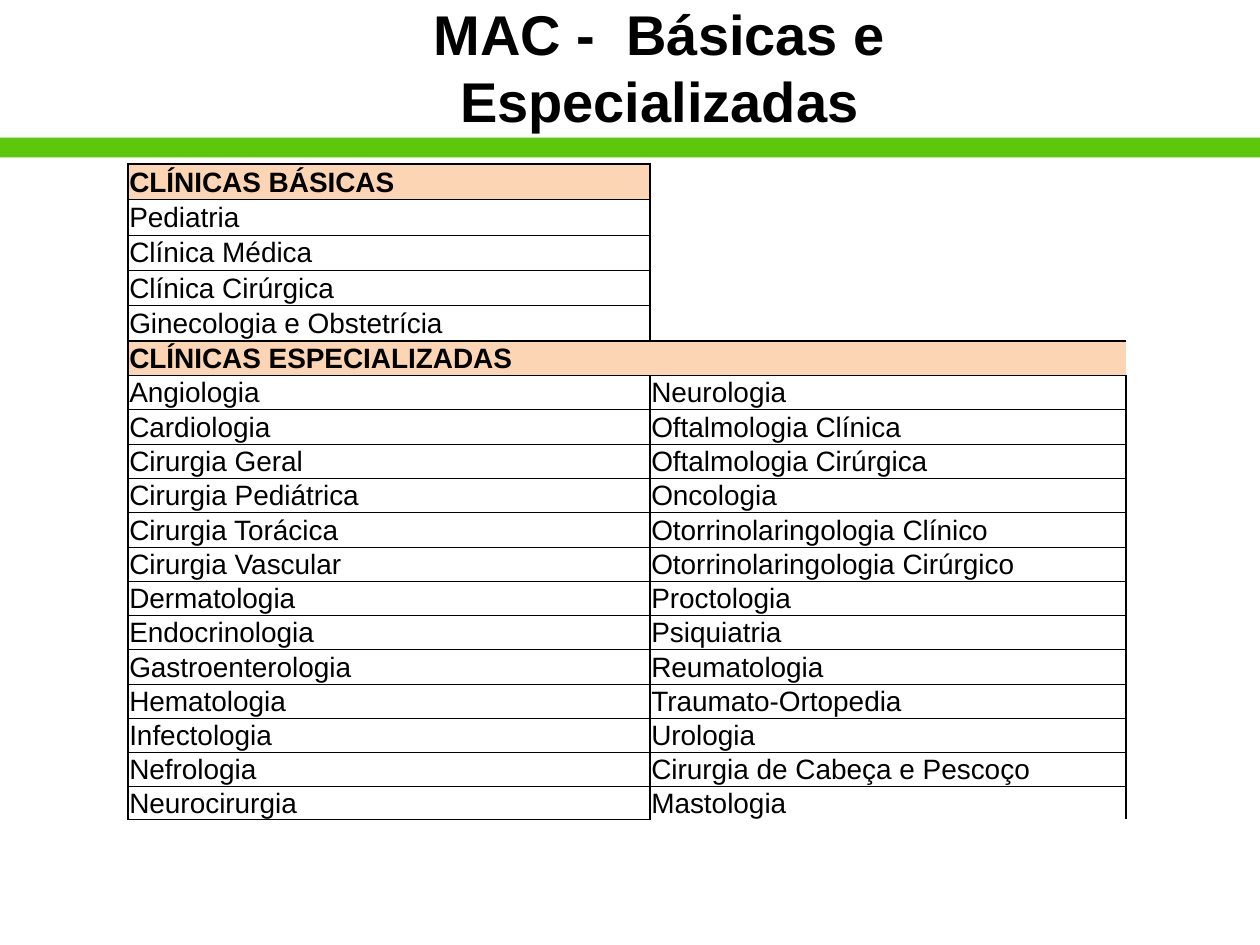
from lxml import etree
from pptx import Presentation
from pptx.dml.color import RGBColor
from pptx.enum.shapes import MSO_SHAPE
from pptx.enum.text import MSO_ANCHOR, PP_ALIGN
from pptx.oxml.ns import qn
from pptx.util import Pt

RECT = MSO_SHAPE.RECTANGLE
TOP, MIDDLE = MSO_ANCHOR.TOP, MSO_ANCHOR.MIDDLE
CENTER = PP_ALIGN.CENTER

FONT = "Arial"
BLACK, WHITE, GREEN, PEACH = "000000", "FFFFFF", "5CC70B", "FCD5B4"
THICK, THIN, NONE = 1, 0.5, 0

BASIC = ["Pediatria", "Clínica Médica", "Clínica Cirúrgica",
         "Ginecologia e Obstetrícia"]
SPECIALIZED = [
    ("Angiologia", "Neurologia"),
    ("Cardiologia", "Oftalmologia Clínica"),
    ("Cirurgia Geral", "Oftalmologia Cirúrgica"),
    ("Cirurgia Pediátrica", "Oncologia"),
    ("Cirurgia Torácica", "Otorrinolaringologia Clínico"),
    ("Cirurgia Vascular", "Otorrinolaringologia Cirúrgico"),
    ("Dermatologia", "Proctologia"),
    ("Endocrinologia", "Psiquiatria"),
    ("Gastroenterologia", "Reumatologia"),
    ("Hematologia", "Traumato-Ortopedia"),
    ("Infectologia", "Urologia"),
    ("Nefrologia", "Cirurgia de Cabeça e Pescoço"),
    ("Neurocirurgia", "Mastologia"),
]


def rgb(color):
    return RGBColor.from_string(color)


def add_run(p, text, size, bold):
    r = p.add_run()
    r.text = text
    r.font.name = FONT
    r.font.size = Pt(size)
    r.font.bold = bold
    r.font.color.rgb = rgb(BLACK)


def add_title(s, text):
    sp = s.shapes.title
    sp.left, sp.top, sp.width, sp.height = Pt(129.2), Pt(-4.1), Pt(495.4), Pt(85)
    tf = sp.text_frame
    tf.word_wrap = True
    tf.vertical_anchor = TOP
    p = tf.paragraphs[0]
    p.alignment = CENTER
    add_run(p, text, 32, True)


def add_band(s):
    sp = s.shapes.add_shape(RECT, Pt(0), Pt(78.7), Pt(720), Pt(11.2))
    sp.shadow.inherit = False
    sp.fill.solid()
    sp.fill.fore_color.rgb = rgb(GREEN)
    sp.line.fill.background()


def set_borders(cell, left, right, top, bottom):
    """Draw the four sides with widths in points; zero hides a side."""
    tc_pr = cell._tc.get_or_add_tcPr()
    for side, width in zip("LRTB", (left, right, top, bottom)):
        ln = etree.SubElement(tc_pr, qn(f"a:ln{side}"), w=str(Pt(width)))
        if width:
            fill = etree.SubElement(ln, qn("a:solidFill"))
            etree.SubElement(fill, qn("a:srgbClr"), val=BLACK)
        else:
            etree.SubElement(ln, qn("a:noFill"))


def set_margins(cell):
    cell.margin_left = cell.margin_right = cell.margin_top = Pt(0.7)
    cell.margin_bottom = Pt(0)


def fill_cell(cell, text, borders, heading=False):
    set_borders(cell, *borders)
    cell.fill.solid()
    cell.fill.fore_color.rgb = rgb(PEACH if heading else WHITE)
    cell.vertical_anchor = MIDDLE
    set_margins(cell)
    add_run(cell.text_frame.paragraphs[0], text, 16, heading)


def clear_cell(cell, borders):
    """Leave the cell empty, with text small enough not to stretch its row."""
    set_borders(cell, *borders)
    cell.fill.background()
    set_margins(cell)
    p = cell.text_frame.paragraphs[0]
    etree.SubElement(p._p, qn("a:endParaRPr"), sz="800")


def add_clinics_table(s):
    split = len(BASIC) + 1
    heights = [20.25] * split + [19.6] * len(SPECIALIZED) + [18.4]
    table = s.shapes.add_table(len(heights), 2, Pt(73.2), Pt(93.8),
                               Pt(570.2), Pt(sum(heights))).table
    table.first_row = table.horz_banding = False
    for column, width in zip(table.columns, (298.3, 271.9)):
        column.width = Pt(width)
    for row, height in zip(table.rows, heights):
        row.height = Pt(height)

    fill_cell(table.cell(0, 0), "CLÍNICAS BÁSICAS", [THICK] * 4, heading=True)
    for i, name in enumerate(BASIC, 1):
        top = THICK if i == 1 else THIN
        bottom = THICK if i == split - 1 else THIN
        fill_cell(table.cell(i, 0), name, (THICK, THICK, top, bottom))
    for i in range(split):
        bottom = THICK if i == split - 1 else NONE
        clear_cell(table.cell(i, 1), (THICK, NONE, NONE, bottom))

    heading = table.cell(split, 0)
    heading.merge(table.cell(split, 1))
    fill_cell(heading, "CLÍNICAS ESPECIALIZADAS", (THICK, NONE, THICK, THIN),
              heading=True)
    clear_cell(table.cell(split, 1), (NONE, NONE, THICK, THIN))

    for i, names in enumerate(SPECIALIZED, split + 1):
        for j, name in enumerate(names):
            is_last = i == len(heights) - 1 and j == 1
            bottom = NONE if is_last else THIN
            fill_cell(table.cell(i, j), name, (THICK, THICK, THIN, bottom))


def main():
    prs = Presentation()
    prs.slide_width, prs.slide_height = Pt(720), Pt(540)
    s = prs.slides.add_slide(prs.slide_layouts[5])
    add_band(s)
    add_clinics_table(s)
    add_title(s, "MAC -  Básicas e Especializadas")
    prs.save("out.pptx")


if __name__ == "__main__":
    main()
